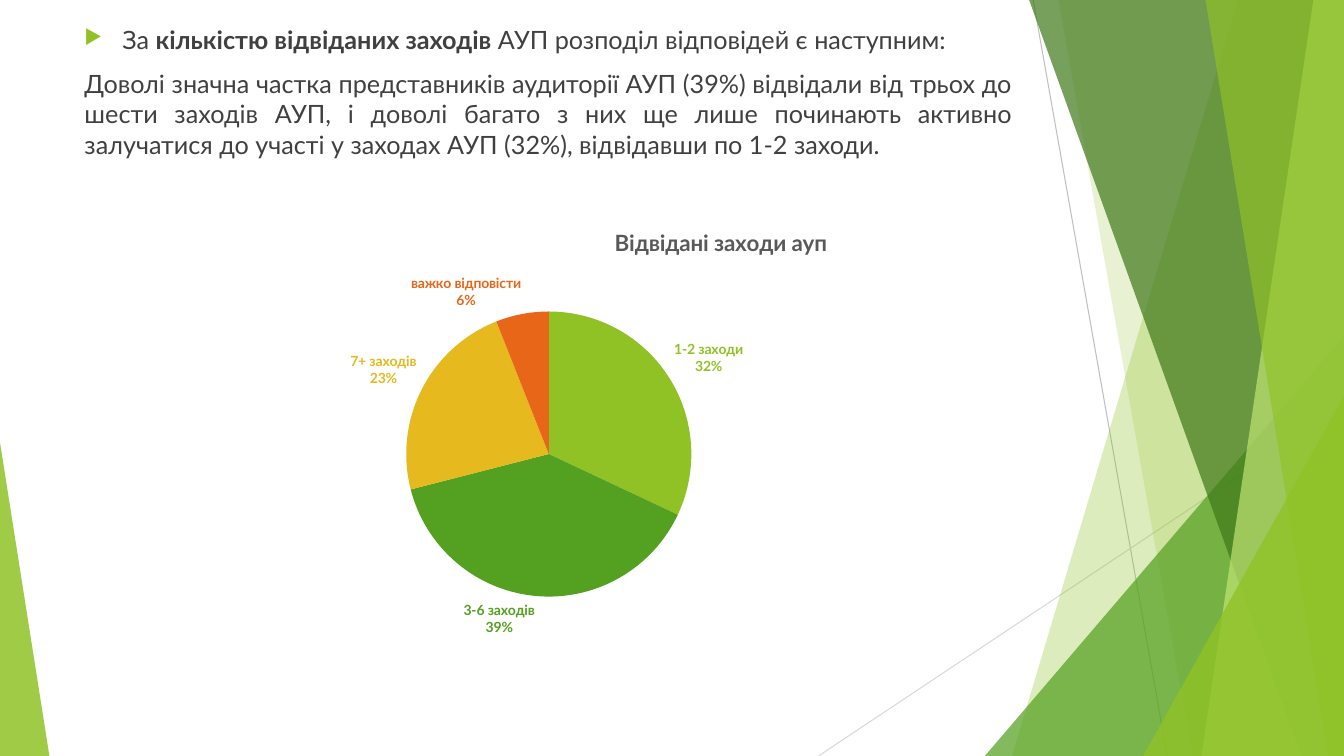
from dataclasses import dataclass

from lxml.etree import SubElement
from pptx import Presentation
from pptx.chart.chart import Chart
from pptx.chart.data import CategoryChartData
from pptx.dml.color import RGBColor
from pptx.enum.chart import XL_CHART_TYPE, XL_LABEL_POSITION
from pptx.enum.shapes import MSO_CONNECTOR, MSO_SHAPE
from pptx.enum.text import PP_ALIGN
from pptx.oxml.ns import qn
from pptx.shapes.autoshape import Shape
from pptx.slide import Slide
from pptx.text.text import Font
from pptx.util import Pt

SLIDE_WIDTH, SLIDE_HEIGHT = 960, 540


@dataclass(frozen=True)
class Theme:
    font: str = "Lato"
    lime: str = "90C226"
    green: str = "54A021"
    dark_green: str = "3F7819"
    pale_lime: str = "C0E474"
    yellow: str = "E6B91E"
    orange: str = "E76618"
    text: str = "404040"
    title: str = "595959"
    dark_line: str = "BFBFBF"
    light_line: str = "D9D9D9"
    body_size: int = 18
    title_size: int = 16
    label_size: int = 10


THEME = Theme()


@dataclass(frozen=True)
class Ray:
    start: tuple[float, float]
    end: tuple[float, float]
    color: str


@dataclass(frozen=True)
class Band:
    """A slanted band that reaches the right edge of the slide."""
    top_x: float
    bottom_x: float
    color: str
    opacity: int


@dataclass(frozen=True)
class Wedge:
    """A right triangle standing on the bottom edge of the slide."""
    left: float
    width: float
    height: float
    apex: float
    color: str
    opacity: int


@dataclass(frozen=True)
class Slice:
    category: str
    percent: int
    color: str


RAYS = [
    Ray((738, 0), (833.76, 540), THEME.dark_line),
    Ray((960, 290.16), (584.64, 540), THEME.light_line),
]
FACETS = [
    Band(884.16, 722.88, THEME.lime, 30),
    Band(756, 851.76, THEME.lime, 20),
    Wedge(703.44, 256.56, 300, 1, THEME.green, 72),
    Band(735.12, 929.52, THEME.dark_green, 70),
    Band(938.16, 858.24, THEME.pale_lime, 70),
    Band(861.12, 948.96, THEME.lime, 65),
    Wedge(816.48, 143.52, 257.04, 1, THEME.lime, 80),
    Wedge(0, 35.28, 223.92, 0, THEME.lime, 85),
]
SLICES = [
    Slice("1-2 заходи", 32, THEME.lime),
    Slice("3-6 заходів", 39, THEME.green),
    Slice("7+ заходів", 23, THEME.yellow),
    Slice("важко відповісти", 6, THEME.orange),
]
INTRO = [
    ("За ", False),
    ("кількістю відвіданих заходів", True),
    (" АУП розподіл відповідей є наступним:", False),
]
FINDING = (
    "Доволі значна частка представників аудиторії АУП (39%) відвідали від трьох до "
    "шести заходів АУП, і доволі багато з них ще лише починають активно залучатися "
    "до участі у заходах АУП (32%), відвідавши по 1-2 заходи."
)


def style_font(font: Font, size: int, color: str, bold: bool) -> None:
    for name, value in {"name": THEME.font, "size": Pt(size), "bold": bold}.items():
        setattr(font, name, value)
    font.color.rgb = RGBColor.from_string(color)


def draw_ray(slide: Slide, ray: Ray) -> None:
    connector = slide.shapes.add_connector(
        MSO_CONNECTOR.STRAIGHT, *map(Pt, ray.start + ray.end))
    connector.line.width = Pt(0.75)
    connector.line.color.rgb = RGBColor.from_string(ray.color)
    SubElement(connector.element.spPr, qn("a:effectLst"))


def add_band(slide: Slide, band: Band) -> Shape:
    builder = slide.shapes.build_freeform(Pt(band.top_x), Pt(0))
    corners = [(SLIDE_WIDTH, 0), (SLIDE_WIDTH, SLIDE_HEIGHT), (band.bottom_x, SLIDE_HEIGHT)]
    builder.add_line_segments([(Pt(x), Pt(y)) for x, y in corners], close=True)
    return builder.convert_to_shape()


def add_wedge(slide: Slide, wedge: Wedge) -> Shape:
    shape = slide.shapes.add_shape(
        MSO_SHAPE.ISOSCELES_TRIANGLE, Pt(wedge.left), Pt(SLIDE_HEIGHT - wedge.height),
        Pt(wedge.width), Pt(wedge.height))
    shape.adjustments[0] = wedge.apex
    return shape


def draw_facet(slide: Slide, facet: Band | Wedge) -> None:
    shape = add_band(slide, facet) if isinstance(facet, Band) else add_wedge(slide, facet)
    shape.shadow.inherit = False
    shape.line.fill.background()
    shape.fill.solid()
    shape.fill.fore_color.rgb = RGBColor.from_string(facet.color)
    color = shape.element.spPr.find(f"{qn('a:solidFill')}/{qn('a:srgbClr')}")
    SubElement(color, qn("a:alpha"), val=str(facet.opacity * 1000))


def draw_body(slide: Slide) -> None:
    box = slide.shapes.add_textbox(Pt(53.28), Pt(13.68), Pt(676.8), Pt(461.52))
    frame = box.text_frame
    frame.word_wrap = True
    intro = frame.paragraphs[0]
    for text, bold in INTRO:
        run = intro.add_run()
        run.text = text
        style_font(run.font, THEME.body_size, THEME.text, bold)
    properties = intro._p.get_or_add_pPr()
    properties.set("marL", str(Pt(27)))
    properties.set("indent", str(Pt(-27)))
    bullet_color = SubElement(properties, qn("a:buClr"))
    SubElement(bullet_color, qn("a:srgbClr"), val=THEME.lime)
    SubElement(properties, qn("a:buSzPct"), val="80000")
    SubElement(properties, qn("a:buChar"), char="▶")

    finding = frame.add_paragraph()
    finding.alignment = PP_ALIGN.JUSTIFY
    finding.space_before = Pt(10)
    run = finding.add_run()
    run.text = FINDING
    style_font(run.font, THEME.body_size, THEME.text, False)


def place(layout_parent, **fractions: float) -> None:
    """Set a manual layout, in fractions of the chart area."""
    layout = layout_parent.find(qn("c:layout"))
    if layout is None:
        layout = layout_parent.makeelement(qn("c:layout"))
        index = 1 if layout_parent.tag == qn("c:title") else 0
        layout_parent.insert(index, layout)
    manual = SubElement(layout, qn("c:manualLayout"))
    if "w" in fractions:
        SubElement(manual, qn("c:layoutTarget"), val="inner")
    for axis in "xy":
        SubElement(manual, qn(f"c:{axis}Mode"), val="edge")
    for name, value in fractions.items():
        SubElement(manual, qn(f"c:{name}"), val=str(value))


def style_slices(chart: Chart) -> None:
    points = chart.plots[0].series[0].points
    for index, piece in enumerate(SLICES):
        fill = points[index].format.fill
        fill.solid()
        fill.fore_color.rgb = RGBColor.from_string(piece.color)
        label = points[index].data_label
        style_font(label.font, THEME.label_size, piece.color, True)
        label.position = XL_LABEL_POSITION.OUTSIDE_END
    for label in chart.element.iter(qn("c:dLbl")):
        for name, shown in {"showVal": "0", "showCatName": "1", "showPercent": "1"}.items():
            label.find(qn(f"c:{name}")).set("val", shown)
        SubElement(label, qn("c:separator")).text = "\n"


def draw_chart(slide: Slide) -> None:
    data = CategoryChartData()
    data.categories = [piece.category for piece in SLICES]
    data.add_series("Series 1", [piece.percent for piece in SLICES])
    chart = slide.shapes.add_chart(
        XL_CHART_TYPE.PIE, Pt(146.88), Pt(146.16), Pt(490.32), Pt(318.24), data).chart
    style_font(chart.font, THEME.label_size, "000000", False)
    chart.has_legend = False
    chart.plots[0].vary_by_categories = True
    title = chart.chart_title
    title.text_frame.text = "Відвідані заходи ауп"
    style_font(title.text_frame.paragraphs[0].runs[0].font, THEME.title_size, THEME.title, True)
    style_slices(chart)
    place(chart.element.find(f".//{qn('c:title')}"), x=0.59, y=0.04)
    place(chart.element.find(f".//{qn('c:plotArea')}"), x=0.29, y=0.24, w=0.42, h=0.64)


def main() -> None:
    presentation = Presentation()
    presentation.slide_width = Pt(SLIDE_WIDTH)
    presentation.slide_height = Pt(SLIDE_HEIGHT)
    slide = presentation.slides.add_slide(presentation.slide_layouts[6])
    for ray in RAYS:
        draw_ray(slide, ray)
    for facet in FACETS:
        draw_facet(slide, facet)
    draw_body(slide)
    draw_chart(slide)
    presentation.save("out.pptx")


if __name__ == "__main__":
    main()
